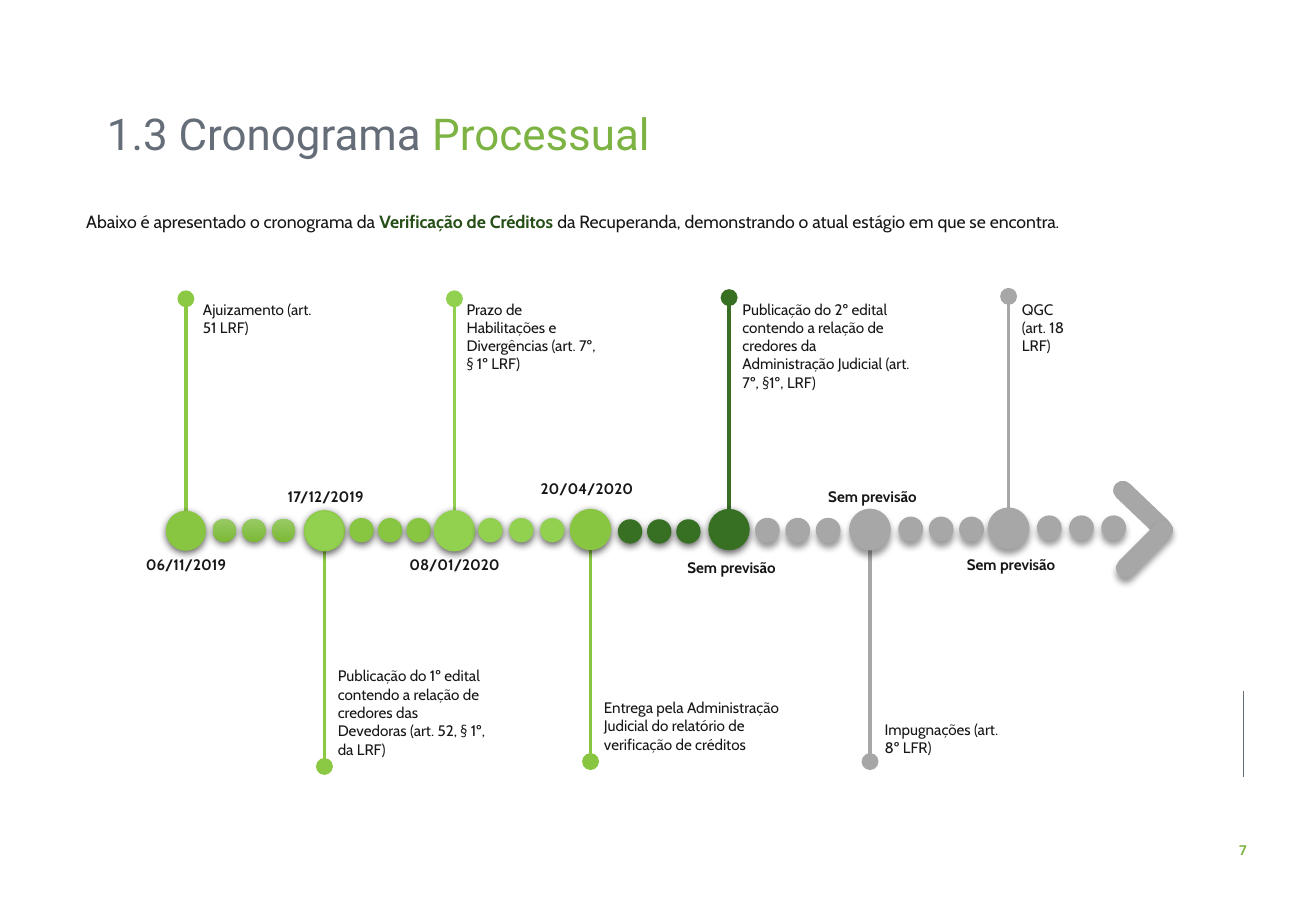
from dataclasses import dataclass
from lxml import etree
from pptx import Presentation
from pptx.dml.color import RGBColor
from pptx.enum import shapes, text
from pptx.oxml import ns
from pptx.util import Inches, Pt


@dataclass(frozen=True)
class Theme:
    ink: str = "181717"
    slate: str = "656D78"
    accent: str = "7CB342"
    strong: str = "264F17"
    lime: str = "92D050"
    leaf: str = "88C641"
    stem: str = "8BC944"
    forest: str = "377023"
    gray: str = "A7A7A7"
    fade: tuple = ("98CA65", "7CB936")
    head: str = "Roboto"
    body: str = "Cabin"
    title: float = 26
    lead: float = 10.5
    note: float = 9
    page: float = 8.1


T = Theme()


@dataclass
class Stage:
    x: float
    y: float
    fill: str
    edge: str
    pin: str
    tip: float
    date: str
    spot: tuple
    note: str
    box: tuple
    dots: tuple
    tone: object


STAGES = [
    Stage(1.53, 4.37, T.leaf, None, T.stem, 2.46, "06/11/2019", (1.53, 4.52),
          "Ajuizamento (art. 51 LRF)", (1.58, 2.42, 1.12, 0.4),
          (1.75, 2.24, 4.27), T.fade),
    Stage(2.67, 4.37, T.lime, T.stem, T.stem, 6.31, "17/12/2019", (2.68, 3.96),
          "Publicação do 1º edital contendo a relação de credores das "
          "Devedoras (art. 52, § 1º, da LRF)", (2.69, 5.44, 1.43, 0.71),
          (2.88, 3.35, 4.27), T.leaf),
    Stage(3.74, 4.37, T.lime, T.lime, T.lime, 2.46, "08/01/2020", (3.74, 4.52),
          "Prazo de Habilitações e Divergências (art. 7º, § 1º LRF)",
          (3.75, 2.42, 1.3, 0.56), (3.94, 4.45, 4.27), T.lime),
    Stage(4.86, 4.36, T.leaf, T.leaf, T.leaf, 6.27, "20/04/2020", (4.83, 3.9),
          "Entrega pela Administração Judicial do relatório de "
          "verificação de créditos", (4.88, 5.7, 1.78, 0.56),
          (5.09, 5.57, 4.28), T.forest),
    Stage(6, 4.36, T.forest, T.forest, T.forest, 2.45, "Sem previsão", (6.02, 4.55),
          "Publicação do 2º edital contendo a relação de credores da "
          "Administração Judicial (art. 7º, §1º, LRF)", (6.02, 2.42, 1.57, 0.71),
          (6.22, 6.72, 4.27), T.gray),
    Stage(7.16, 4.36, T.gray, T.gray, T.gray, 6.27, "Sem previsão", (7.18, 3.96),
          "Impugnações (art. 8º LFR)", (7.19, 5.88, 1.24, 0.4),
          (7.4, 7.9, 4.26), T.gray),
    Stage(8.3, 4.35, T.gray, T.gray, T.gray, 2.44, "Sem previsão", (8.32, 4.52),
          "QGC\n(art. 18 LRF)", (8.32, 2.42, 0.75, 0.56),
          (8.54, 9.07, 4.25), T.gray),
]


def rgb(tone):
    return RGBColor.from_string(tone)


def child(node, tag, **attrs):
    return etree.SubElement(node, ns.qn(tag), {k: str(v) for k, v in attrs.items()})


def style(para, size, tone=None, bold=None, face=T.body):
    font = para.font
    font.name, font.size, font.bold = face, Pt(size), bold
    if tone:
        font.color.rgb = rgb(tone)


def add_run(para, words, tone, bold=False):
    run = para.add_run()
    run.text = words
    run.font.color.rgb = rgb(tone)
    run.font.bold = bold


def add_text(slide, box, words=""):
    frame = slide.shapes.add_textbox(*map(Inches, box)).text_frame
    frame.word_wrap = True
    frame.margin_left = frame.margin_right = Inches(0.09)
    frame.margin_top = frame.margin_bottom = Inches(0.05)
    frame.text = words
    return frame.paragraphs


def add_line(slide, start, end, tone, width, oval=False):
    line = slide.shapes.add_connector(
        shapes.MSO_CONNECTOR.STRAIGHT, *map(Inches, start + end))
    line.line.color.rgb = rgb(tone)
    line.line.width = Pt(width)
    if oval:
        child(line.line._get_or_add_ln(), "a:headEnd", type="oval", w="lg", len="lg")
    child(line._element.spPr, "a:effectLst")


def add_shade(shape, soft):
    alpha, blur, drop = (40, 4, 3) if soft else (63, 4.5, 1.5)
    list_ = shape._element.spPr.find(ns.qn("a:effectLst"))
    shade = child(list_, "a:outerShdw", blurRad=Pt(blur), dist=Pt(drop),
                  dir=5400000, algn="ctr", rotWithShape=0)
    color = child(shade, "a:srgbClr", val="000000")
    child(color, "a:alpha", val=alpha * 1000)


def add_form(slide, kind, box, tone, edge=None, shade=True):
    shape = slide.shapes.add_shape(kind, *map(Inches, box))
    shape.shadow.inherit = False
    if isinstance(tone, tuple):
        shape.fill.gradient()
        shape.fill.gradient_angle = 270
        for stop, part in zip(shape.fill.gradient_stops, tone):
            stop.color.rgb = rgb(part)
    else:
        shape.fill.solid()
        shape.fill.fore_color.rgb = rgb(tone)
    if edge:
        shape.line.color.rgb = rgb(edge)
        shape.line.width = Pt(1 if edge == T.gray else 0.75)
    else:
        shape.line.fill.background()
    if shade:
        add_shade(shape, tone == T.gray)
    return shape


def add_dot(slide, x, y, size, tone, edge):
    add_form(slide, shapes.MSO_SHAPE.OVAL, (x, y, size, size), tone, edge)


def add_stage(slide, stage):
    add_line(slide, (stage.x, stage.tip), (stage.x, stage.y), stage.pin, 2, True)
    add_dot(slide, stage.x - 0.165, stage.y - 0.165, 0.33, stage.fill, stage.edge)
    first, last, top = stage.dots
    edge = None if stage.tone == T.fade else stage.tone
    for i in range(3):
        add_dot(slide, first + (last - first) * i / 2, top, 0.19, stage.tone, edge)
    x, y = stage.spot
    date = add_text(slide, (x - 0.55, y, 1.1, 0.25), stage.date)[0]
    date.alignment = text.PP_ALIGN.CENTER
    style(date, T.note, T.ink, True)
    for para in add_text(slide, stage.box, stage.note):
        style(para, T.note, T.ink)


def add_arrow(slide):
    for x, y, turn, shade in [(9.1, 4.11, 43.7, False), (9.12, 4.44, 315, True)]:
        bar = add_form(slide, shapes.MSO_SHAPE.ROUNDED_RECTANGLE,
                       (x, y, 0.6, 0.16), T.gray, shade=shade)
        bar.adjustments[0] = 0.5
        bar.rotation = turn


def add_title(slide):
    title = slide.shapes.title
    title.left, title.top, title.width, title.height = map(
        Inches, (0.78, 0.86, 8.18, 0.53))
    frame = title.text_frame
    frame.vertical_anchor = text.MSO_ANCHOR.MIDDLE
    frame.auto_size = text.MSO_AUTO_SIZE.NONE
    para = frame.paragraphs[0]
    para.alignment = text.PP_ALIGN.LEFT
    para.line_spacing = 0.9
    style(para, T.title, face=T.head)
    add_run(para, "1.3 Cronograma ", T.slate)
    add_run(para, "Processual", T.accent)


def add_lead(slide):
    para = add_text(slide, (0.31, 1.66, 10.17, 0.3))[0]
    para.alignment = text.PP_ALIGN.JUSTIFY
    para.line_spacing = 1.14
    para._p.get_or_add_pPr().set("indent", str(Inches(0.31)))
    style(para, T.lead)
    add_run(para, "Abaixo é apresentado o cronograma da ", T.ink)
    add_run(para, "Verificação de Créditos ", T.strong, True)
    add_run(para, "da Recuperanda, demonstrando o atual estágio "
                  "em que se encontra.", T.ink)


def add_page(slide):
    add_line(slide, (10.23, 5.69), (10.23, 6.4), T.slate, 0.5)
    para = add_text(slide, (10.06, 6.88, 0.34, 0.24), "7")[0]
    para.alignment = text.PP_ALIGN.CENTER
    style(para, T.page, T.accent, True, T.head)


def main():
    deck = Presentation()
    deck.slide_width, deck.slide_height = Inches(10.83), Inches(7.5)
    slide = deck.slides.add_slide(deck.slide_layouts[5])
    add_title(slide)
    add_lead(slide)
    add_page(slide)
    for stage in STAGES:
        add_stage(slide, stage)
    add_arrow(slide)
    deck.save("out.pptx")


if __name__ == "__main__":
    main()
